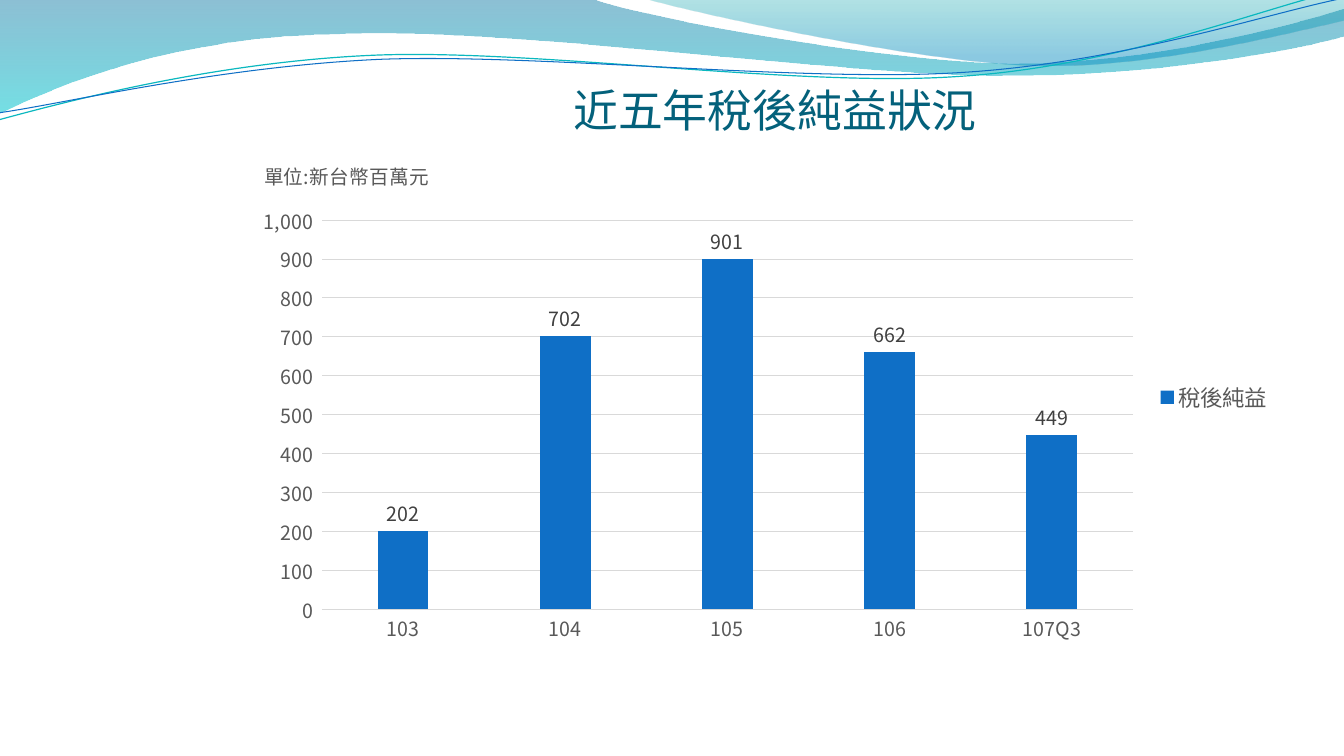
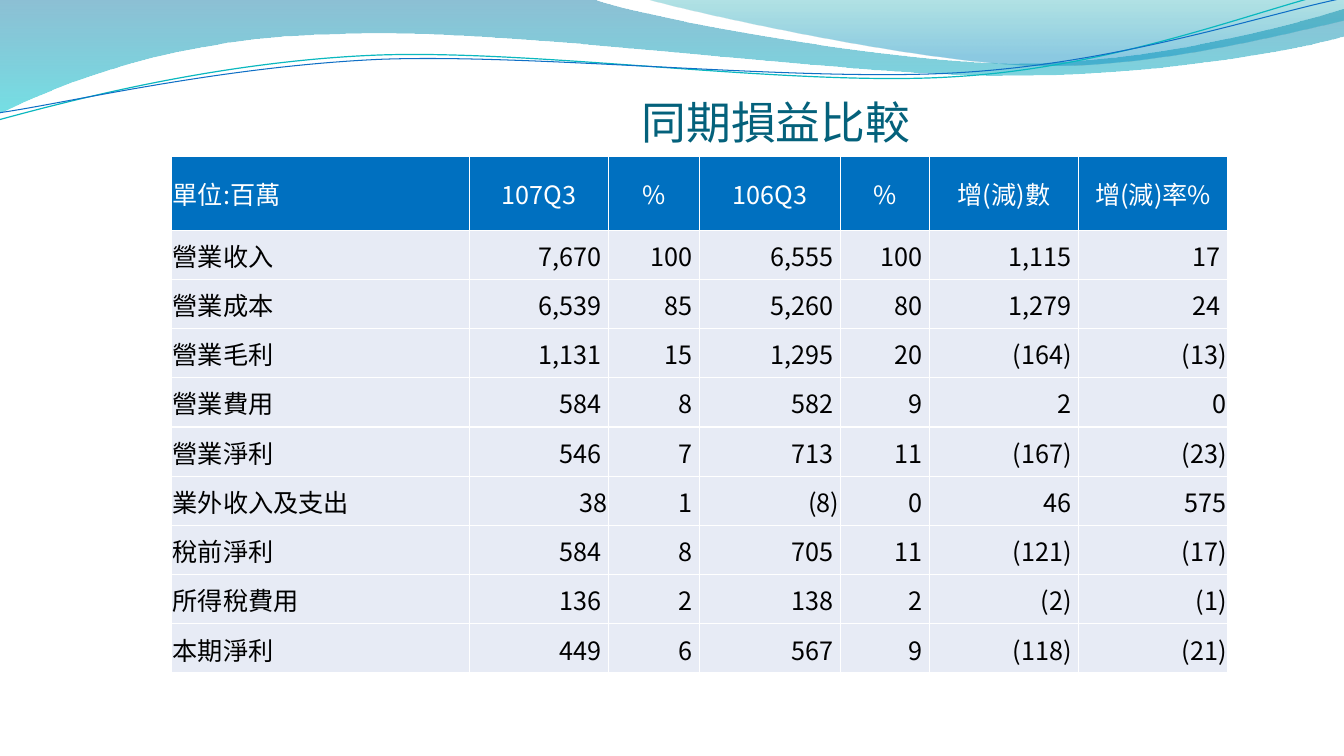
from lxml import etree
from pptx import Presentation
from pptx import util as u
from pptx.chart.data import CategoryChartData
from pptx.dml.color import RGBColor
from pptx.enum import chart as ch
from pptx.enum import text as t
from pptx.oxml import ns

COLORS = {
    "title": "04617B", "bar": "0F6FC6", "teal": "0AB8BF", "grid": "D9D9D9",
    "axis": "595959", "label": "404040", "black": "000000", "white": "FFFFFF",
    "header": "0070C0", "row": "E7EBF5",
    "deep": "0074A1", "aqua": "00C6CF", "sea": "00A1A9", "sky": "008BBF",
}
FONT = "Noto Sans CJK SC"

# Header waves in cm: one point is a straight step, three points are a curve
WAVES = [
    {"start": (0, 0), "steps": [
        [(14.91, -0.03)],
        [(16.1, 0.43), (22.48, 1.6), (25.68, 1.6)],
        [(28.91, 1.6), (32.46, 0.66), (33.86, 0.23)],
        [(33.91, 0.91)],
        [(33.3, 1.12), (29.46, 1.93), (25.25, 1.91)],
        [(21.06, 1.91), (12.93, 0.71), (8.71, 0.86)],
        [(4.37, 0.91), (1.55, 2.11), (-0.03, 2.87)]],
     "gradient": [(0, "deep", 45), (1, "aqua", 55)]},
    {"start": (16.23, -0.03), "steps": [
        [(17.25, 0.28), (23.09, 1.57), (26.04, 1.65)],
        [(28.98, 1.75), (32.56, 0.81), (33.86, 0.53)],
        [(33.86, 0)]],
     "gradient": [(0, "sea", 30), (0.8, "sky", 45)]},
    {"start": (-0.08, 2.22), "steps": [
        [(1.6, 1.85), (5.36, 1.03), (9.37, 1.04)],
        [(13.41, 1.05), (20.02, 2.36), (24.1, 2.27)],
        [(28.17, 2.21), (31.85, 0.91), (33.86, 0.55)]],
     "line": ("teal", 0.85)},
    {"start": (-0.05, 2.04), "steps": [
        [(1.57, 1.89), (5.54, 1.14), (9.6, 1.15)],
        [(13.64, 1.19), (20.19, 2.24), (24.23, 2.17)],
        [(28.3, 2.11), (31.9, 1.06), (33.93, 0.75)]],
     "line": ("bar", 0.75)},
]
LINE_TILT = 357.3

PROFIT = {"103": 202, "104": 702, "105": 901, "106": 662, "107Q3": 449}

COLUMN_WIDTHS = [7.52, 3.49, 2.29, 3.56, 2.24, 3.76, 3.76]
INCOME = [
    ["單位:百萬", "107Q3", "%", "106Q3", "%", "增(減)數", "增(減)率%"],
    ["營業收入", "7,670 ", "100 ", "6,555 ", "100 ", "1,115 ", "17 "],
    ["營業成本", "6,539 ", "85 ", "5,260 ", "80 ", "1,279 ", "24 "],
    ["營業毛利", "1,131 ", "15 ", "1,295 ", "20 ", "(164) ", "(13)"],
    ["營業費用", "584 ", "8 ", "582 ", "9 ", "2 ", "0"],
    ["營業淨利", "546 ", "7 ", "713 ", "11 ", "(167) ", "(23)"],
    ["業外收入及支出", "38", "1 ", "(8)", "0 ", "46 ", "575"],
    ["稅前淨利", "584 ", "8 ", "705 ", "11 ", "(121) ", "(17)"],
    ["所得稅費用", "136 ", "2 ", "138 ", "2 ", "(2) ", "(1)"],
    ["本期淨利", "449 ", "6 ", "567 ", "9 ", "(118) ", "(21)"],
]


def rgb(name):
    return RGBColor.from_string(COLORS[name])


def cm(*lengths):
    return [u.Cm(length) for length in lengths]


def apply(target, values):
    for name, value in values.items():
        setattr(target, name, value)


def style_font(font, size, color, face=FONT):
    apply(font, {"size": u.Pt(size), "name": face, "bold": False})
    font.color.rgb = rgb(color)


def style_line(line, color, width):
    line.color.rgb = rgb(color)
    line.width = u.Pt(width)


def use_east_asian_font(element):
    """Give Chinese text the same typeface as Latin text."""
    for latin in list(element.iter(ns.qn("a:latin"))):
        east = etree.Element(ns.qn("a:ea"), typeface=latin.get("typeface"))
        latin.addnext(east)


def set_layout(parent, index, **fractions):
    """Place a chart part by fractions of the chart's area."""
    for old in parent.findall(ns.qn("c:layout")):
        parent.remove(old)
    layout = etree.Element(ns.qn("c:layout"))
    manual = etree.SubElement(layout, ns.qn("c:manualLayout"))
    for name, value in fractions.items():
        etree.SubElement(manual, ns.qn("c:" + name), val=str(value))
    parent.insert(index, layout)


def bend(outline, steps):
    """Turn the three segments of each curved step into one Bezier curve."""
    segments = iter(list(outline.iter(ns.qn("a:lnTo"))))
    for step in steps:
        parts = [next(segments) for _ in step]
        if len(parts) == 3:
            curve = etree.Element(ns.qn("a:cubicBezTo"))
            parts[0].addprevious(curve)
            for part in parts:
                curve.append(part[0])
                part.getparent().remove(part)


class Deck:
    def __init__(self):
        self.prs = Presentation()
        apply(self.prs, {"slide_width": u.Cm(33.87), "slide_height": u.Cm(19.05)})
        self.layout = self.prs.slide_layouts[5]
        for footer in list(self.layout.placeholders)[1:]:
            footer.element.getparent().remove(footer.element)
        self.slide = None

    def new_slide(self, title, box):
        first = self.slide is None
        self.slide = self.prs.slides.add_slide(self.layout)
        if first:
            self.share_waves()
        heading = self.slide.shapes.title
        apply(heading, dict(zip(("left", "top", "width", "height"), cm(*box))))
        frame = heading.text_frame
        frame.text = title
        apply(frame, {"margin_left": 0, "margin_right": 0, "margin_bottom": 0,
                      "margin_top": u.Cm(0.13), "word_wrap": True,
                      "auto_size": t.MSO_AUTO_SIZE.NONE,
                      "vertical_anchor": t.MSO_ANCHOR.BOTTOM})
        frame.paragraphs[0].alignment = t.PP_ALIGN.CENTER
        style_font(frame.paragraphs[0].runs[0].font, 32, "title")
        use_east_asian_font(heading.element)

    def share_waves(self):
        """Draw the waves once and move them behind the layout's title."""
        waves = [self.wave(**wave) for wave in WAVES]
        for position, wave in enumerate(waves, start=2):
            self.layout.shapes.element.insert(position, wave.element)

    def wave(self, start, steps, gradient=None, line=None):
        builder = self.slide.shapes.build_freeform(*cm(*start))
        builder.add_line_segments(
            [cm(*point) for step in steps for point in step],
            close=gradient is not None)
        wave = builder.convert_to_shape()
        bend(wave.element, steps)
        wave.shadow.inherit = False
        if line:
            wave.rotation = LINE_TILT
            wave.fill.background()
            style_line(wave.line, *line)
            return wave
        wave.line.fill.background()
        wave.fill.gradient()
        wave.fill.gradient_angle = 270
        for stop, (position, color, _) in zip(wave.fill.gradient_stops, gradient):
            stop.position = position
            stop.color.rgb = rgb(color)
        tints = list(wave.element.spPr.iter(ns.qn("a:srgbClr")))
        for tint, (_, _, opacity) in zip(tints, gradient):
            etree.SubElement(tint, ns.qn("a:alpha"), val=str(opacity * 1000))
        return wave

    def column_chart(self, unit, name, values, box):
        data = CategoryChartData()
        data.categories = list(values)
        data.add_series(name, list(values.values()))
        chart = self.slide.shapes.add_chart(
            ch.XL_CHART_TYPE.COLUMN_CLUSTERED, *cm(*box), data).chart
        style_font(chart.font, 10, "black", "Cambria")

        # Unit note and legend
        note = chart.chart_title.text_frame
        note.text = unit
        style_font(note.paragraphs[0].runs[0].font, 14, "axis")
        chart.has_legend = True
        apply(chart.legend, {"position": ch.XL_LEGEND_POSITION.RIGHT,
                             "include_in_layout": False})
        style_font(chart.legend.font, 16, "axis")

        # Axes
        amounts, years = chart.value_axis, chart.category_axis
        for axis in (amounts, years):
            axis.major_tick_mark = ch.XL_TICK_MARK.NONE
            style_font(axis.tick_labels.font, 14, "axis")
        apply(amounts, {"minimum_scale": 0, "maximum_scale": 1000, "major_unit": 100})
        apply(amounts.tick_labels, {"number_format": r"#,##0_);[Red]\(#,##0\)",
                                    "number_format_is_linked": False})
        amounts.format.line.fill.background()
        style_line(amounts.major_gridlines.format.line, "grid", 0.75)
        style_line(years.format.line, "grid", 0.75)

        # Columns and their values
        plot = chart.plots[0]
        apply(plot, {"gap_width": 219, "overlap": -27,
                     "vary_by_categories": False, "has_data_labels": True})
        apply(plot.data_labels, {"show_value": True,
                                 "position": ch.XL_LABEL_POSITION.OUTSIDE_END})
        style_font(plot.data_labels.font, 14, "label")
        columns = plot.series[0].format.fill
        columns.solid()
        columns.fore_color.rgb = rgb("bar")

        space = chart.element
        set_layout(next(space.iter(ns.qn("c:title"))), 1,
                   xMode="edge", yMode="edge", x=0.017, y=0.026)
        set_layout(next(space.iter(ns.qn("c:plotArea"))), 0,
                   layoutTarget="inner", xMode="edge", yMode="edge",
                   x=0.076, y=0.153, w=0.78, h=0.763)
        use_east_asian_font(space)

    def table(self, rows, widths, left, top, row_height):
        frame = self.slide.shapes.add_table(
            len(rows), len(widths),
            *cm(left, top, sum(widths), row_height * len(rows)))
        grid = frame.table
        grid.horz_banding = False
        for column, width in zip(grid.columns, widths):
            column.width = u.Cm(width)
        for r, row in enumerate(rows):
            grid.rows[r].height = u.Cm(row_height)
            for c, value in enumerate(row):
                self.cell(grid.cell(r, c), value, is_header=r == 0, is_name=c == 0)
        self.cell_borders(frame.element)
        use_east_asian_font(frame.element)

    def cell(self, cell, value, is_header, is_name):
        cell.text = value
        edge = u.Cm(0.03)
        apply(cell, {"margin_left": edge, "margin_right": edge, "margin_top": edge,
                     "margin_bottom": 0, "vertical_anchor": t.MSO_ANCHOR.MIDDLE})
        cell.fill.solid()
        cell.fill.fore_color.rgb = rgb("header" if is_header else "row")
        paragraph = cell.text_frame.paragraphs[0]
        if not is_name:
            paragraph.alignment = t.PP_ALIGN.CENTER if is_header else t.PP_ALIGN.RIGHT
        style_font(paragraph.runs[0].font, 18, "white" if is_header else "black")

    def cell_borders(self, table):
        """Put white borders before the fill of every cell."""
        for properties in table.iter(ns.qn("a:tcPr")):
            for position, side in enumerate(("lnL", "lnR", "lnT", "lnB")):
                border = etree.Element(ns.qn("a:" + side), w=str(u.Pt(1)))
                fill = etree.SubElement(border, ns.qn("a:solidFill"))
                etree.SubElement(fill, ns.qn("a:srgbClr"), val=COLORS["white"])
                properties.insert(position, border)


def main():
    deck = Deck()

    # Net profit by year
    deck.new_slide("近五年稅後純益狀況", (7.15, 1.98, 24.77, 1.45))
    deck.column_chart("單位:新台幣百萬元", "稅後純益", PROFIT,
                      (6.12, 3.58, 26.21, 12.86))

    # Income compared with the same period
    deck.new_slide("同期損益比較", (7.17, 2.01, 24.77, 1.73))
    deck.table(INCOME, COLUMN_WIDTHS, left=4.32, top=3.93, row_height=1.24)

    deck.prs.save("out.pptx")


if __name__ == "__main__":
    main()
